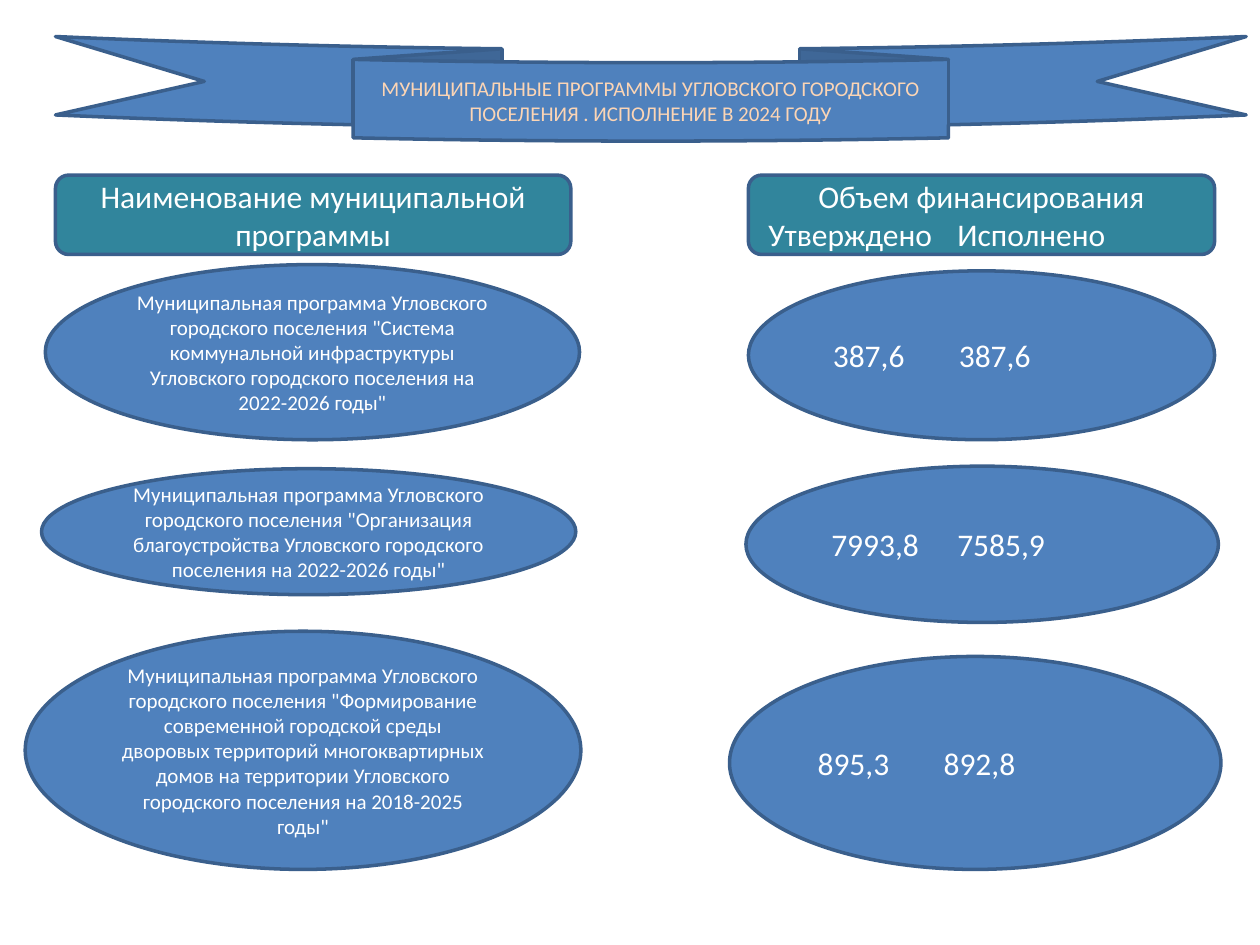
from lxml import etree
from pptx import Presentation
from pptx.dml.color import RGBColor
from pptx.enum.shapes import MSO_SHAPE
from pptx.enum.text import MSO_ANCHOR, PP_ALIGN
from pptx.oxml.ns import qn
from pptx.util import Inches, Pt

RIBBON = MSO_SHAPE.CURVED_DOWN_RIBBON
ROUNDED = MSO_SHAPE.ROUNDED_RECTANGLE
OVAL = MSO_SHAPE.OVAL
MIDDLE = MSO_ANCHOR.MIDDLE
CENTER = PP_ALIGN.CENTER
LEFT = PP_ALIGN.LEFT

BLUE, TEAL, OUTLINE = "4F81BD", "31859C", "3A5F8C"
WHITE, PEACH = "FFFFFF", "FCD5B5"
SMALL, LARGE = 12, 18
INSET = 0.1
PAIR_MARGIN = 0.03
OVAL_TEXT_SHARE = 0.707
HEADER_TEXT_SHARE = 0.98

TITLE = "МУНИЦИПАЛЬНЫЕ ПРОГРАММЫ УГЛОВСКОГО ГОРОДСКОГО ПОСЕЛЕНИЯ . ИСПОЛНЕНИЕ В 2024 ГОДУ"
PROGRAM = 'Муниципальная программа Угловского городского поселения "{}"'
PROGRAMS = [
    ("Система коммунальной инфраструктуры Угловского городского поселения на 2022-2026 годы",
     (0.36, 2.1, 4.24, 1.39), ("387,6", "387,6"), (5.94, 2.15, 3.7, 1.34)),
    ("Организация благоустройства Угловского городского поселения на 2022-2026 годы",
     (0.33, 3.72, 4.24, 1), ("7993,8", "7585,9"), (5.92, 3.7, 3.75, 1.24)),
    ("Формирование современной городской среды дворовых территорий многоквартирных "
     "домов на территории Угловского городского поселения на 2018-2025 годы",
     (0.2, 5.01, 4.41, 1.89), ("895,3", "892,8"), (5.79, 5.21, 3.9, 1.69)),
]


def color(value):
    """Turn a hex string into a colour."""
    return RGBColor.from_string(value)


def add_figure(page, kind, bounds, fill):
    """Add an outlined preset shape with middle-anchored, wrapping text."""
    shape = page.shapes.add_shape(kind, *map(Inches, bounds))
    shape.shadow.inherit = False
    shape.fill.solid()
    shape.fill.fore_color.rgb = color(fill)
    shape.line.color.rgb = color(OUTLINE)
    shape.line.width = Pt(2)
    shape.text_frame.word_wrap = True
    shape.text_frame.vertical_anchor = MIDDLE
    return shape


def write(para, text, size, ink=WHITE, align=CENTER):
    """Write one formatted run into a paragraph."""
    para.alignment = align
    span = para.add_run()
    span.text = text
    for name, value in {"name": "Calibri", "size": Pt(size)}.items():
        setattr(span.font, name, value)
    span.font.color.rgb = color(ink)


def write_pair(para, pair, text_width):
    """Set two words at the opposite edges of the text area with a right tab."""
    write(para, "\t".join(pair), LARGE, align=LEFT)
    properties = para._p.get_or_add_pPr()
    properties.set("marL", str(Inches(PAIR_MARGIN)))
    properties.set("indent", "0")
    tabs = etree.SubElement(properties, qn("a:tabLst"))
    position = Inches(text_width - 2 * INSET - PAIR_MARGIN)
    etree.SubElement(tabs, qn("a:tab"), pos=str(position), algn="r")


def add_label(page, kind, bounds, fill, text, size, ink=WHITE):
    """Add a shape holding one centred paragraph."""
    shape = add_figure(page, kind, bounds, fill)
    write(shape.text_frame.paragraphs[0], text, size, ink)


def add_funding_header(page, bounds):
    """Add the heading above the approved and executed amounts."""
    frame = add_figure(page, ROUNDED, bounds, TEAL).text_frame
    write(frame.paragraphs[0], "Объем финансирования", LARGE)
    write_pair(frame.add_paragraph(), ("Утверждено", "Исполнено"),
               bounds[2] * HEADER_TEXT_SHARE)


def add_amounts(page, bounds, pair):
    """Add an oval with the approved and executed amounts."""
    frame = add_figure(page, OVAL, bounds, BLUE).text_frame
    write_pair(frame.paragraphs[0], pair, bounds[2] * OVAL_TEXT_SHARE)


def main():
    """Build the slide of municipal programmes and save it."""
    deck = Presentation()
    deck.slide_width, deck.slide_height = Inches(10), Inches(7.5)
    page = deck.slides.add_slide(deck.slide_layouts[6])
    add_label(page, RIBBON, (0.44, 0.29, 9.45, 0.83), BLUE, TITLE, SMALL, PEACH)
    add_label(page, ROUNDED, (0.44, 1.39, 4.09, 0.63), TEAL,
              "Наименование муниципальной программы", LARGE)
    add_funding_header(page, (5.94, 1.39, 3.7, 0.63))
    for name, name_bounds, amounts, amount_bounds in PROGRAMS:
        add_label(page, OVAL, name_bounds, BLUE, PROGRAM.format(name), SMALL)
        add_amounts(page, amount_bounds, amounts)
    deck.save("out.pptx")


if __name__ == "__main__":
    main()
